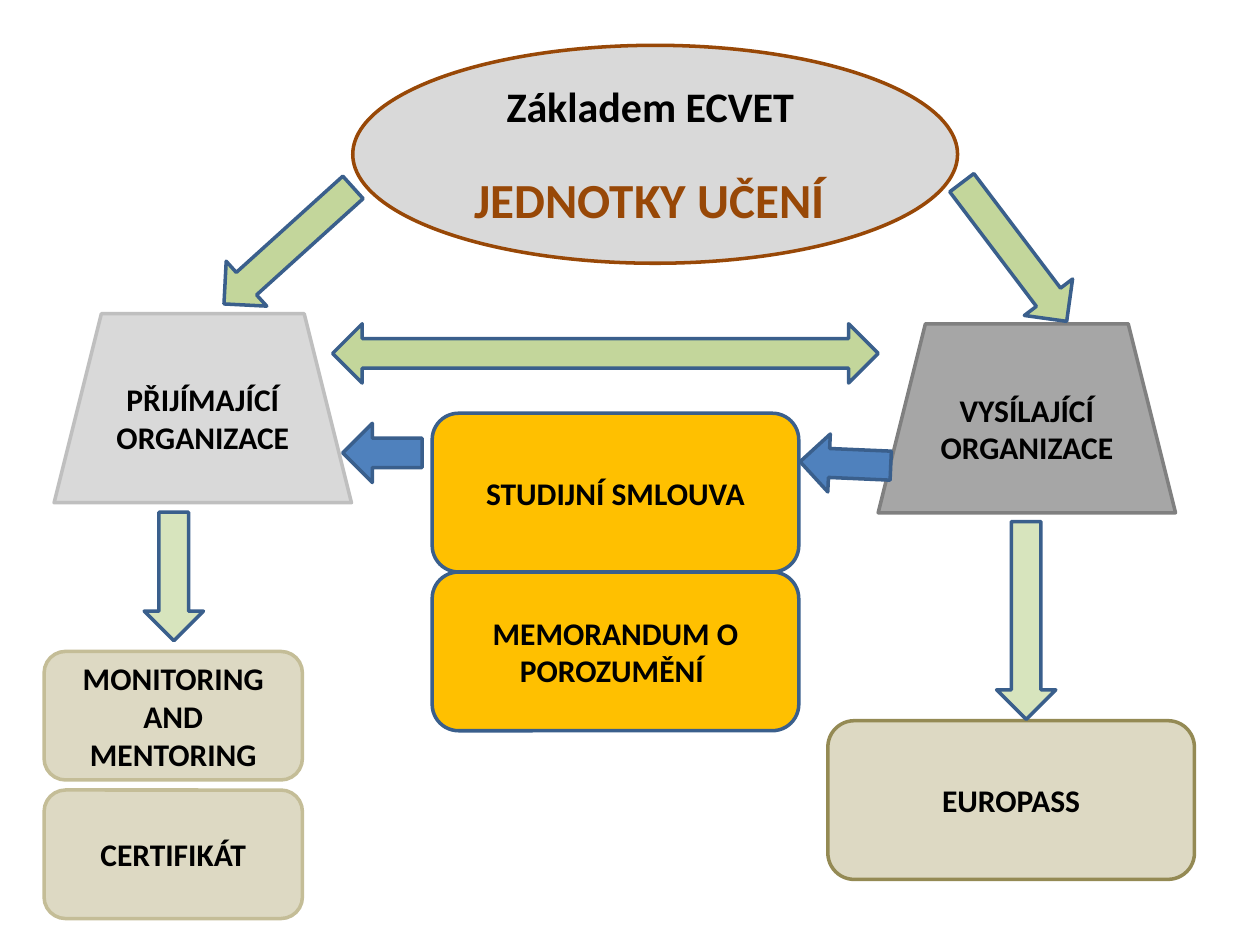
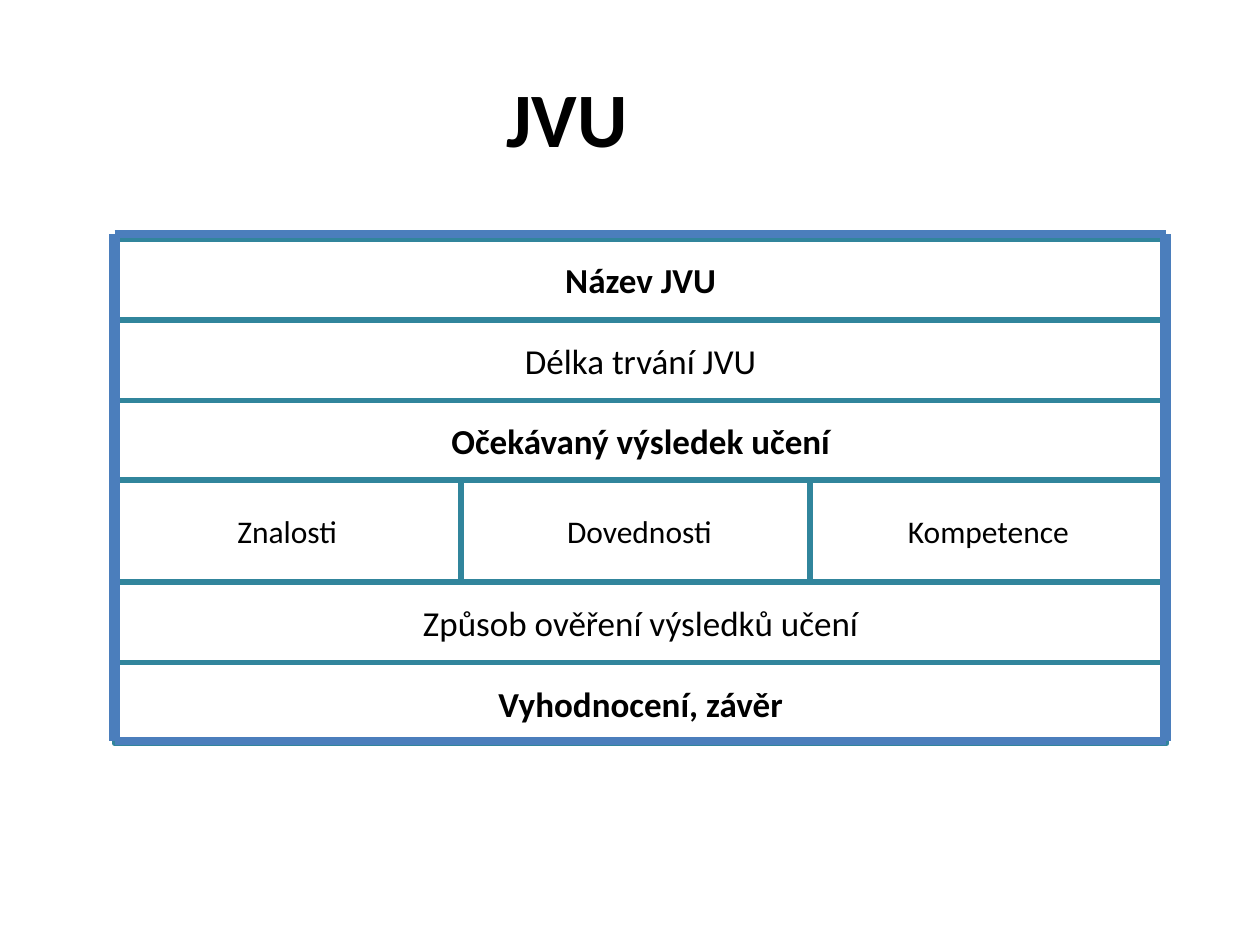
from itertools import accumulate
from lxml.etree import SubElement
from pptx import Presentation
from pptx.dml.color import RGBColor
from pptx.enum.shapes import MSO_CONNECTOR, MSO_SHAPE
from pptx.enum.text import MSO_ANCHOR, PP_ALIGN
from pptx.oxml.ns import qn
from pptx.util import Inches, Pt

COLUMNS, ROWS = 100, 75
CELL = Inches(0.1)
FONT = "Calibri"
COLORS = {
    "text": "000000", "white": "FFFFFF", "unit": "984807",
    "light_gray": "D9D9D9", "gray_edge": "BFBFBF",
    "mid_gray": "A6A6A6", "dark_gray": "808080",
    "amber": "FFC000", "navy": "3A5F8C", "blue": "4F81BD",
    "green": "C3D69B", "pale_green": "D7E4BD",
    "sand": "DDD9C3", "sand_edge": "C4BD97", "olive": "948A54",
    "teal": "31859C", "frame": "4B7EBC",
}


def color(name):
    return RGBColor.from_string(COLORS[name])


def grid(*cells):
    return [round(cell * CELL) for cell in cells]


def add_paragraph(paragraph, wording, size, bold=True, ink="text", before=0):
    paragraph.alignment = PP_ALIGN.CENTER
    paragraph.space_before = Pt(before)
    run = paragraph.add_run()
    run.text = wording
    run.font.name = FONT
    run.font.size = Pt(size)
    run.font.bold = bold
    run.font.color.rgb = color(ink)


def add_figure(slide, kind, place, fill, edge, weight=2, turn=0):
    figure = slide.shapes.add_shape(kind, *grid(*place))
    figure.shadow.inherit = False
    figure.fill.solid()
    figure.fill.fore_color.rgb = color(fill)
    figure.line.color.rgb = color(edge)
    figure.line.width = Pt(weight)
    figure.rotation = turn
    return figure


def add_box(slide, kind, place, fill, edge, wording, size=18, bold=True, weight=2):
    box = add_figure(slide, kind, place, fill, edge, weight)
    add_paragraph(box.text_frame.paragraphs[0], wording, size, bold)


def add_title(slide, wording):
    title = slide.shapes.add_textbox(*grid(0, 3, 90, 12.5)).text_frame
    title.word_wrap = True
    title.vertical_anchor = MSO_ANCHOR.MIDDLE
    add_paragraph(title.paragraphs[0], wording, 44)


def add_rule(slide, ends, weight):
    rule = slide.shapes.add_connector(MSO_CONNECTOR.STRAIGHT, *grid(*ends))
    rule.line.color.rgb = color("frame")
    rule.line.width = Pt(weight)
    SubElement(rule._element.spPr, qn("a:effectLst"))


def add_foundation(slide):
    foundation = add_figure(slide, MSO_SHAPE.OVAL, (28, 3.6, 48, 17.3),
                            "light_gray", "unit").text_frame
    add_paragraph(foundation.paragraphs[0], "Základem ECVET ", 24)
    add_paragraph(foundation.add_paragraph(), "JEDNOTKY UČENÍ ", 28,
                  ink="unit", before=22)


def build_ecvet_scheme(slide):
    add_foundation(slide)
    organizations = [
        (4.3, 24.9, "light_gray", "gray_edge", "PŘIJÍMAJÍCÍ ORGANIZACE"),
        (69.7, 25.7, "mid_gray", "dark_gray", "VYSÍLAJÍCÍ ORGANIZACE"),
    ]
    for left, top, fill, edge, wording in organizations:
        add_box(slide, MSO_SHAPE.TRAPEZOID, (left, top, 23.6, 15), fill, edge, wording)

    large, small = (29.1, 12.6), (20.5, 10.2)
    documents = [
        (34.3, 32.8, large, "amber", "navy", "STUDIJNÍ SMLOUVA"),
        (34.3, 45.4, large, "amber", "navy", "MEMORANDUM O POROZUMĚNÍ "),
        (3.5, 51.7, small, "sand", "sand_edge", "MONITORING AND MENTORING"),
        (3.5, 62.7, small, "sand", "sand_edge", "CERTIFIKÁT"),
        (65.7, 57.2, large, "sand", "olive", "EUROPASS"),
    ]
    for left, top, extent, fill, edge, wording in documents:
        add_box(slide, MSO_SHAPE.ROUNDED_RECTANGLE, (left, top, *extent),
                fill, edge, wording)

    down, left_pointing = MSO_SHAPE.DOWN_ARROW, MSO_SHAPE.LEFT_ARROW
    arrows = [
        (down, (20.5, 12.6, 4.8, 13.8), "green", 47.9),
        (down, (78.1, 13.1, 4.8, 13.8), "green", 322.9),
        (MSO_SHAPE.LEFT_RIGHT_ARROW, (26.4, 25.7, 43.3, 4.7), "green", 0),
        (left_pointing, (27.2, 33.6, 6.3, 4.7), "blue", 0),
        (left_pointing, (63.5, 34.5, 7.2, 4.6), "blue", 2.5),
        (down, (11.45, 40.65, 4.7, 10.2), "pale_green", 0),
        (down, (79.1, 41.4, 4.7, 15.7), "pale_green", 0),
    ]
    for kind, place, fill, turn in arrows:
        add_figure(slide, kind, place, fill, "navy", turn=turn)


def build_unit_form(slide):
    add_title(slide, "JVU")
    full_width = (9.1, 83.5)
    outcomes = [
        (9, 27.6, "Znalosti"),
        (36.6, 28.3, "Dovednosti"),
        (64.3, 28.3, "Kompetence"),
    ]
    form_rows = [
        (6.4, 20, True, [(*full_width, "Název JVU")]),
        (6.4, 20, False, [(*full_width, "Délka trvání JVU")]),
        (6.3, 20, True, [(*full_width, "Očekávaný výsledek učení")]),
        (8.1, 18, False, outcomes),
        (6.4, 20, False, [(*full_width, "Způsob ověření výsledků učení")]),
        (6.4, 20, True, [(*full_width, "Vyhodnocení, závěr")]),
    ]
    tops = accumulate((row[0] for row in form_rows), initial=19)
    for top, (height, size, bold, fields) in zip(tops, form_rows):
        for left, width, wording in fields:
            add_box(slide, MSO_SHAPE.RECTANGLE, (left, top, width, height),
                    "white", "teal", wording, size, bold, weight=3)

    left, top, right, bottom = 9.1, 18.6, 92.5, 58.8
    for level in (top, bottom):
        add_rule(slide, (left, level, right, level), 4.5)
    for side in (left, right):
        add_rule(slide, (side, top, side, bottom), 6)


def main():
    deck = Presentation()
    deck.slide_width, deck.slide_height = grid(COLUMNS, ROWS)
    blank = deck.slide_layouts[6]
    for build in (build_ecvet_scheme, build_unit_form):
        build(deck.slides.add_slide(blank))
    deck.save("out.pptx")


if __name__ == "__main__":
    main()
